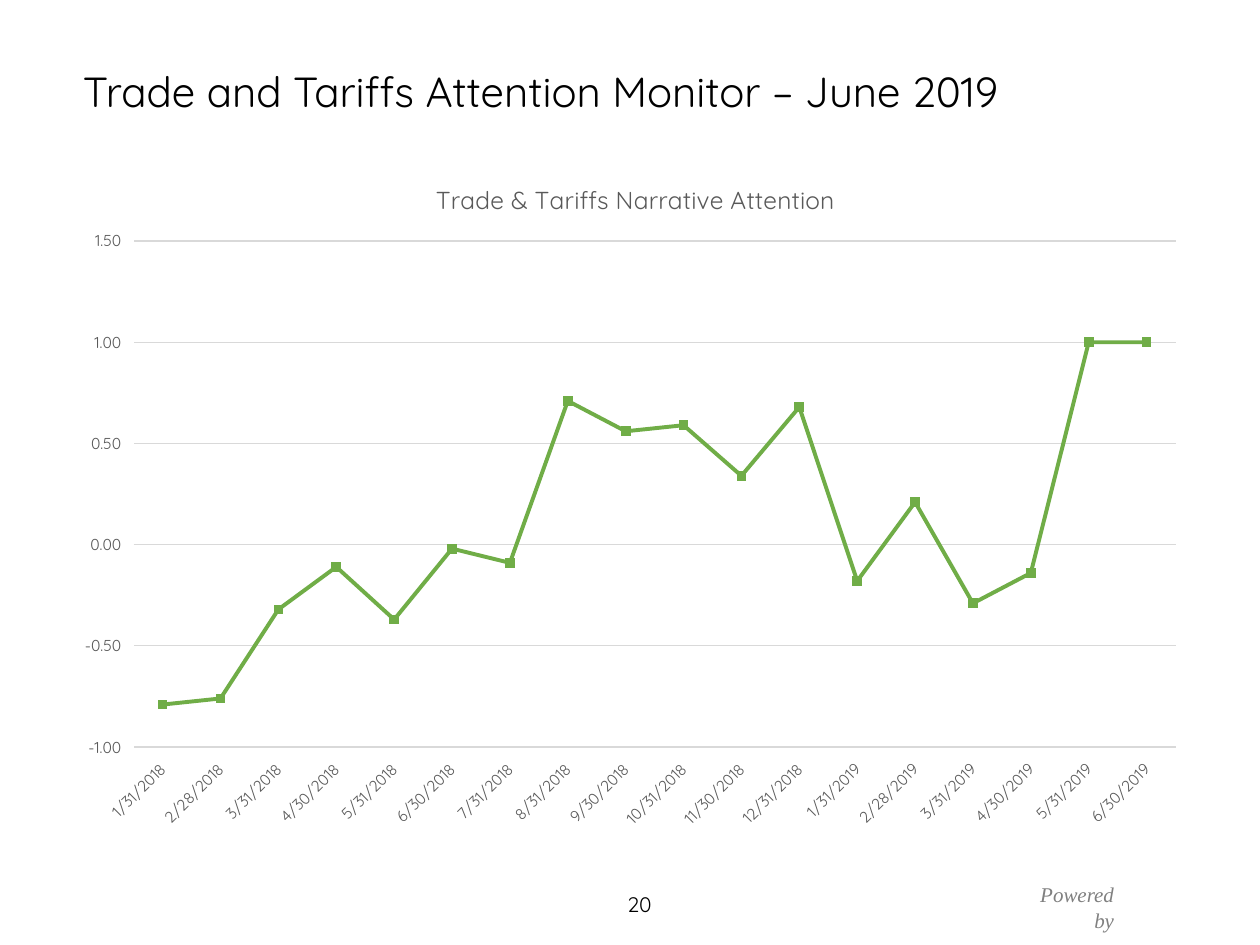
from dataclasses import dataclass

from lxml import etree
from pptx import Presentation
from pptx.chart.data import CategoryChartData
from pptx.dml.color import RGBColor
from pptx.enum.chart import XL_CHART_TYPE as ChartType
from pptx.enum.chart import XL_TICK_LABEL_POSITION as LabelPos
from pptx.enum.chart import XL_TICK_MARK as TickMark
from pptx.enum.text import MSO_ANCHOR as Anchor
from pptx.enum.text import PP_ALIGN as Align
from pptx.oxml.ns import qn
from pptx.util import Inches, Pt

COLORS = {"black": "000000", "label": "595959", "grid": "D9D9D9",
          "line": "70AD47", "footer": "808080"}
FONT = "Quicksand"
MONTH_ENDS = [
    "1/31/2018", "2/28/2018", "3/31/2018", "4/30/2018", "5/31/2018", "6/30/2018",
    "7/31/2018", "8/31/2018", "9/30/2018", "10/31/2018", "11/30/2018", "12/31/2018",
    "1/31/2019", "2/28/2019", "3/31/2019", "4/30/2019", "5/31/2019", "6/30/2019",
]
ATTENTION = [-0.79, -0.76, -0.32, -0.11, -0.37, -0.02, -0.09, 0.71, 0.56,
             0.59, 0.34, 0.68, -0.18, 0.21, -0.29, -0.14, 1, 1]


@dataclass
class Label:
    text: str
    box: tuple[float, float, float, float]
    size: int = 12
    color: str = "black"
    font: str = FONT
    italic: bool = False
    align: Align = Align.LEFT
    anchor: Anchor = Anchor.TOP
    line_spacing: float = 1.0


LABELS = [
    Label("Powered by", (8.09, 6.95, 0.85, 0.3), color="footer",
          font="Times New Roman", italic=True, align=Align.RIGHT),
    Label("20", (4.88, 7.03, 0.41, 0.3)),
    Label("Trade and Tariffs Attention Monitor – June 2019",
          (0.56, 0.57, 8.62, 0.35), size=24, anchor=Anchor.MIDDLE, line_spacing=0.9),
]


def rgb(name: str) -> RGBColor:
    return RGBColor.from_string(COLORS[name])


def set_font(font, size: int, color: str, name: str = FONT, italic: bool = False) -> None:
    values = {"size": Pt(size), "name": name, "italic": italic, "bold": False}
    for key, value in values.items():
        setattr(font, key, value)
    font.color.rgb = rgb(color)


def set_line(line, color: str, width: float) -> None:
    line.color.rgb = rgb(color)
    line.width = Pt(width)


def add_label(slide, label: Label) -> None:
    tf = slide.shapes.add_textbox(*map(Inches, label.box)).text_frame
    tf.word_wrap = True
    tf.vertical_anchor = label.anchor
    p = tf.paragraphs[0]
    p.alignment = label.align
    p.line_spacing = label.line_spacing
    r = p.add_run()
    r.text = label.text
    set_font(r.font, label.size, label.color, label.font, label.italic)


def set_layout(parent, **fractions: float) -> None:
    """Place a chart part by fractions of the chart area."""
    layout = parent.find(qn("c:layout"))
    if layout is None:
        layout = etree.Element(qn("c:layout"))
        tx = parent.find(qn("c:tx"))
        if tx is None:
            parent.insert(0, layout)
        else:
            tx.addnext(layout)
    manual = etree.SubElement(layout, qn("c:manualLayout"))
    if "w" in fractions:
        etree.SubElement(manual, qn("c:layoutTarget")).set("val", "inner")
    for key in ("x", "y"):
        etree.SubElement(manual, qn(f"c:{key}Mode")).set("val", "edge")
    for key, value in fractions.items():
        etree.SubElement(manual, qn(f"c:{key}")).set("val", str(value))


def style_axis(axis) -> None:
    values = {"major_tick_mark": TickMark.NONE, "minor_tick_mark": TickMark.NONE,
              "tick_label_position": LabelPos.LOW}
    for key, value in values.items():
        setattr(axis, key, value)
    set_font(axis.tick_labels.font, 9, "label")


def add_attention_chart(slide) -> None:
    data = CategoryChartData(number_format="0.00")
    data.categories = MONTH_ENDS
    data.add_series("Series 1", ATTENTION)
    box = map(Inches, (0.56, 1.19, 8.95, 5.48))
    chart = slide.shapes.add_chart(ChartType.LINE, *box, data).chart
    set_font(chart.font, 10, "black")
    chart.has_legend = False

    chart.has_title = True
    title = chart.chart_title
    r = title.text_frame.paragraphs[0].add_run()
    r.text = "Trade & Tariffs Narrative Attention"
    set_font(r.font, 14, "label")
    title.include_in_layout = False
    set_layout(title._element, x=0.32, y=0.04)
    plot_area = chart._chartSpace.find(f".//{qn('c:plotArea')}")
    set_layout(plot_area, x=0.056, y=0.132, w=0.924, h=0.733)

    dates, scale = chart.category_axis, chart.value_axis
    for axis in (dates, scale):
        style_axis(axis)
    set_line(dates.format.line, "grid", 0.75)
    dates._element.find(f"{qn('c:txPr')}/{qn('a:bodyPr')}").set("rot", "-2700000")
    limits = {"minimum_scale": -1, "maximum_scale": 1.5, "major_unit": 0.5}
    for key, value in limits.items():
        setattr(scale, key, value)
    scale.tick_labels.number_format = "0.00"
    scale.tick_labels.number_format_is_linked = False
    scale.format.line.fill.background()
    set_line(scale.major_gridlines.format.line, "grid", 0.75)

    plot = chart.plots[0]
    plot.vary_by_categories = False
    series = plot.series[0]
    series.smooth = False
    series.marker.style = None
    set_line(series.format.line, "line", 2.25)
    ln = series._element.find(f"{qn('c:spPr')}/{qn('a:ln')}")
    ln.set("cap", "rnd")
    etree.SubElement(ln, qn("a:round"))


def main() -> None:
    prs = Presentation()
    prs.slide_width, prs.slide_height = Inches(10), Inches(7.5)
    s = prs.slides.add_slide(prs.slide_layouts[6])
    for label in LABELS:
        add_label(s, label)
    add_attention_chart(s)
    prs.save("out.pptx")


if __name__ == "__main__":
    main()
